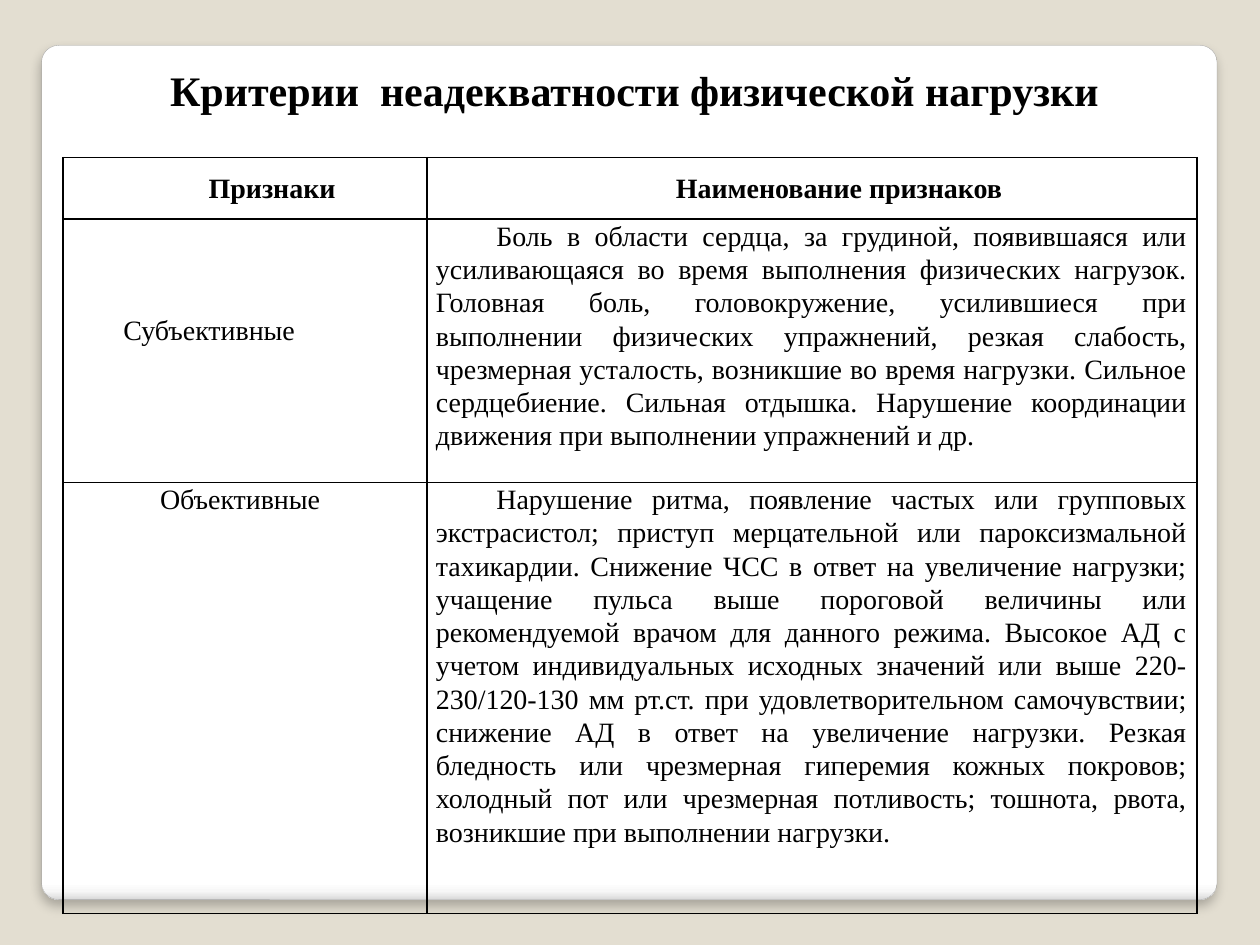
import pptx
import pptx.util
import pptx.dml.color
import pptx.enum.shapes
import pptx.enum.text
import pptx.oxml

COLORS = {"backdrop": "E3DED1", "ink": "000000", "panel_edge": "A4A4A4"}
PANEL_STOPS = [(0, "FFFFFF"), (98, "FFFFFF"), (99, "F7F7F7"), (100, "DADADA")]
FONT = "Times New Roman"
NS = 'xmlns:a="http://schemas.openxmlformats.org/drawingml/2006/main"'
ALIGN = pptx.enum.text.PP_ALIGN
ANCHOR = pptx.enum.text.MSO_ANCHOR
Inches = pptx.util.Inches
Pt = pptx.util.Pt


def rgb(name):
    return pptx.dml.color.RGBColor.from_string(COLORS[name])


def style(paragraph, size, bold, align, left, first_line, right=0):
    paragraph.alignment = align
    props = paragraph._p.get_or_add_pPr()
    for key, length in (("marL", left), ("marR", right), ("indent", first_line)):
        props.set(key, str(Inches(length)))
    for run in paragraph.runs:
        run.font.name = FONT
        run.font.size = Pt(size)
        run.font.bold = bold
        run.font.color.rgb = rgb("ink")


deck = pptx.Presentation()
deck.slide_width, deck.slide_height = Inches(10), Inches(7.5)
W, H = deck.slide_width, deck.slide_height
slide = deck.slides.add_slide(deck.slide_layouts[6])
slide.background.fill.solid()
slide.background.fill.fore_color.rgb = rgb("backdrop")

panel = slide.shapes.add_shape(
    pptx.enum.shapes.MSO_SHAPE.ROUNDED_RECTANGLE,
    int(W * 0.033), int(H * 0.048), int(W * 0.933), int(H * 0.904))
panel.adjustments[0] = 0.02
panel.shadow.inherit = False
panel.line.color.rgb = rgb("panel_edge")
panel.line.width = Pt(0.16)
panel.fill.gradient()
panel.fill.gradient_angle = 270
stops = panel._element.spPr.find(".//{*}gsLst")
for stop in list(stops):
    stops.remove(stop)
for position, color in PANEL_STOPS:
    stops.append(pptx.oxml.parse_xml(
        f'<a:gs {NS} pos="{position * 1000}"><a:srgbClr val="{color}"/></a:gs>'))
panel._element.spPr.find("{*}effectLst").append(pptx.oxml.parse_xml(
    f'<a:outerShdw {NS} blurRad="{Pt(6)}" dist="{Pt(4)}" dir="5400000" rotWithShape="0">'
    f'<a:srgbClr val="{COLORS["ink"]}"><a:alpha val="25000"/></a:srgbClr></a:outerShdw>'))

rows = [
    ("Признаки", "Наименование признаков"),
    ("Субъективные",
     "Боль в области сердца, за грудиной, появившаяся или усиливающаяся во время "
     "выполнения физических нагрузок. Головная боль, головокружение, усилившиеся при "
     "выполнении физических упражнений, резкая слабость, чрезмерная усталость, возникшие "
     "во время нагрузки. Сильное сердцебиение. Сильная отдышка. Нарушение координации "
     "движения при выполнении упражнений и др."),
    ("Объективные",
     "Нарушение ритма, появление частых или групповых экстрасистол; приступ мерцательной "
     "или пароксизмальной тахикардии. Снижение ЧСС в ответ на увеличение нагрузки; учащение "
     "пульса выше пороговой величины или рекомендуемой врачом для данного режима. Высокое АД "
     "с учетом индивидуальных исходных значений или выше 220-230/120-130 мм рт.ст. при "
     "удовлетворительном самочувствии; снижение АД в ответ на увеличение нагрузки. Резкая "
     "бледность или чрезмерная гиперемия кожных покровов; холодный пот или чрезмерная "
     "потливость; тошнота, рвота, возникшие при выполнении нагрузки."),
]
column_widths = [2.89, 6.11]
row_heights = [0.49, 2.09, 3.42]
label_indents = [0.48, 0.48, 0.7]
label_lefts = [0.03, 0, 0.07]
label_tops = [0, 0.75, 0]

criteria = slide.shapes.add_table(
    3, 2, int(W * 0.05), int(H / 6), Inches(sum(column_widths)), Inches(sum(row_heights))).table
for column, width in zip(criteria.columns, column_widths):
    column.width = Inches(width)
for r, (texts, height) in enumerate(zip(rows, row_heights)):
    criteria.rows[r].height = Inches(height)
    for c, text in enumerate(texts):
        cell = criteria.cell(r, c)
        header, label = r == 0, c == 0
        cell.margin_left = cell.margin_bottom = 0
        cell.margin_right = Inches(0.03)
        cell.margin_top = Inches(label_tops[r] if label else 0)
        cell.vertical_anchor = ANCHOR.MIDDLE if header else ANCHOR.TOP
        cell.text_frame.text = text
        paragraph = cell.text_frame.paragraphs[0]
        paragraph.line_spacing = 1.07
        if header:
            align = ALIGN.CENTER
        else:
            align = ALIGN.LEFT if label else ALIGN.JUSTIFY
        style(paragraph, 16, header, align,
              label_lefts[r] if label or header else 0.07,
              label_indents[r] if label else 0.48, 0.05)
        borders = cell._tc.get_or_add_tcPr()
        for side in ("lnL", "lnR", "lnT", "lnB"):
            borders.append(pptx.oxml.parse_xml(
                f'<a:{side} {NS} w="{Pt(1)}"><a:solidFill>'
                f'<a:srgbClr val="{COLORS["ink"]}"/></a:solidFill></a:{side}>'))
        cell.fill.background()

heading = slide.shapes.add_textbox(
    int(W * 0.042), int(H * 0.056), int(W * 0.917), int(H * 0.115)).text_frame
heading.word_wrap = True
heading.vertical_anchor = ANCHOR.TOP
heading.margin_left, heading.margin_right = Inches(0.45), Inches(0.49)
heading.margin_top, heading.margin_bottom = Inches(0.09), 0
heading.text = "Критерии  неадекватности физической нагрузки"
style(heading.paragraphs[0], 24, True, ALIGN.LEFT, 0, 0.48)

deck.save("out.pptx")
